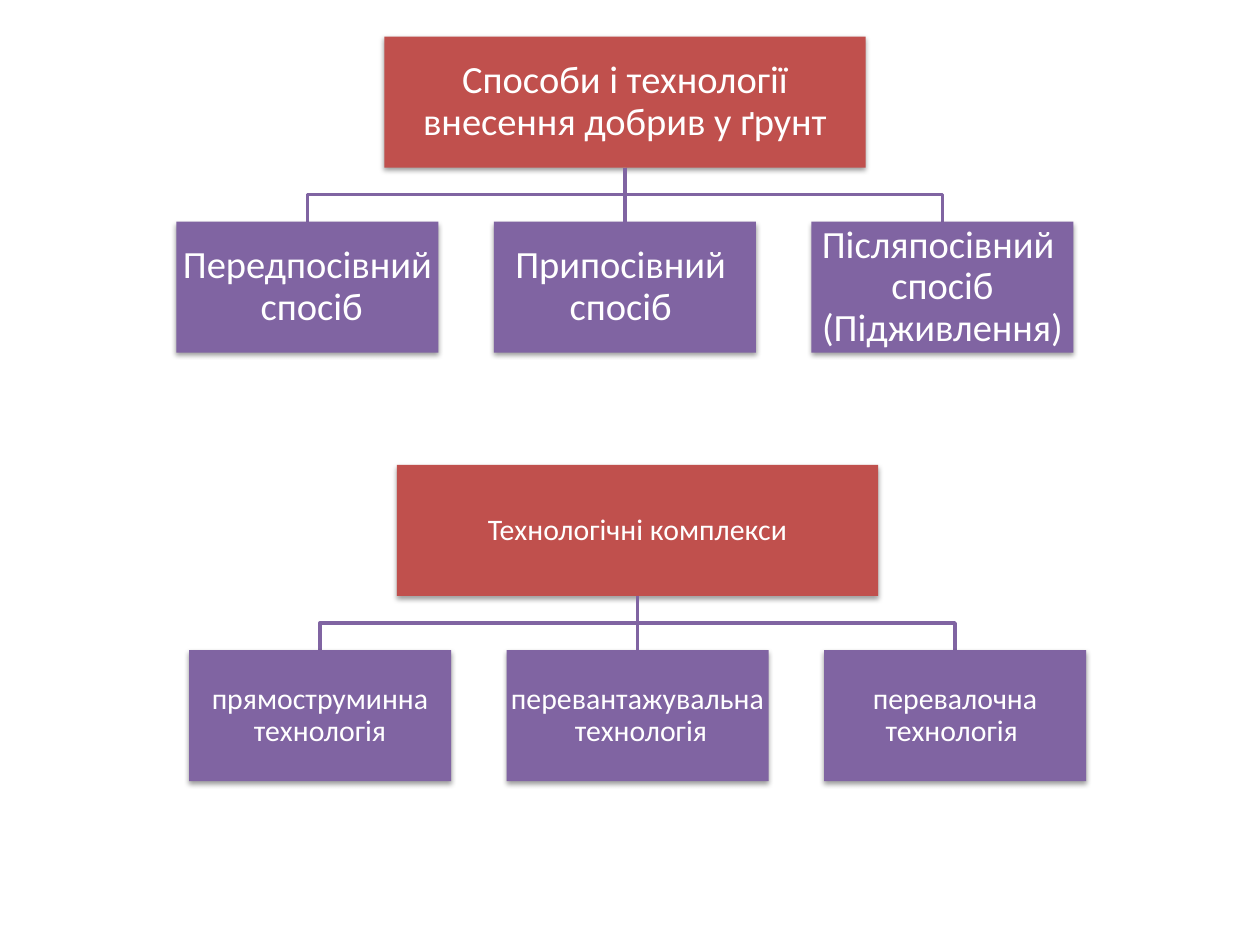
from lxml import etree
from pptx import Presentation
from pptx.dml.color import RGBColor
from pptx.enum import shapes, text
from pptx.oxml import ns
from pptx.util import Inches, Pt

# Content: each chart has a root, its branches and its place
CHARTS = [
    {
        "root": "Способи і технології внесення добрив у ґрунт",
        "branches": ["Передпосівний  спосіб", "Припосівний  спосіб ",
                     "Післяпосівний  спосіб (Підживлення)"],
        "center": 4.96, "top": 0.29, "size": 22, "inset": 0.02,
    },
    {
        "root": "Технологічні комплекси",
        "branches": ["прямоструминна технологія", "перевантажувальна  технологія",
                     "перевалочна технологія "],
        "center": 5.06, "top": 3.69, "size": 17, "inset": 0.01,
    },
]

THEME = {
    "font": "Calibri", "text": RGBColor.from_string("FFFFFF"),
    "root": RGBColor.from_string("C0504D"),
    "branch": RGBColor.from_string("8064A2"),
    "line": Pt(2),
}
ROOT_WIDTH, BRANCH_WIDTH, HEIGHT = 3.82, 2.08, 1.04
STEP, DROP = 2.52, 0.43


def set_effects(shape, shadow=False):
    """Replace inherited effects with none, or with a soft shadow below."""
    properties = shape._element.spPr
    for old in properties.findall(ns.qn("a:effectLst")):
        properties.remove(old)
    effects = etree.SubElement(properties, ns.qn("a:effectLst"))
    if shadow:
        outer = etree.SubElement(effects, ns.qn("a:outerShdw"), blurRad=str(Pt(3.1)),
                                 dist=str(Pt(1.6)), dir="5400000", rotWithShape="0")
        color = etree.SubElement(outer, ns.qn("a:srgbClr"), val="000000")
        etree.SubElement(color, ns.qn("a:alpha"), val="38000")


def style_line(line):
    line.color.rgb = THEME["branch"]
    line.width = THEME["line"]


def add_box(group, label, center, top, width, fill, chart):
    box = group.shapes.add_shape(
        shapes.MSO_SHAPE.RECTANGLE, Inches(center - width / 2), Inches(top),
        Inches(width), Inches(HEIGHT))
    box.fill.solid()
    box.fill.fore_color.rgb = fill
    box.line.fill.background()
    set_effects(box, shadow=True)

    frame = box.text_frame
    frame.word_wrap = True
    frame.vertical_anchor = text.MSO_ANCHOR.MIDDLE
    for side in ("left", "top", "right", "bottom"):
        setattr(frame, f"margin_{side}", Inches(chart["inset"]))
    para = frame.paragraphs[0]
    para.alignment, para.line_spacing = text.PP_ALIGN.CENTER, 0.9
    span = para.add_run()
    span.text = label
    formats = {"name": THEME["font"], "size": Pt(chart["size"])}
    for name, value in formats.items():
        setattr(span.font, name, value)
    span.font.color.rgb = THEME["text"]
    return box


def add_elbow(group, start, end, top):
    middle, bottom = top + DROP / 2, top + DROP
    builder = group.shapes.build_freeform(Inches(start), Inches(top))
    corners = [(start, middle), (end, middle), (end, bottom)]
    builder.add_line_segments([(Inches(x), Inches(y)) for x, y in corners], close=False)
    elbow = builder.convert_to_shape()
    elbow.fill.background()
    style_line(elbow.line)
    set_effects(elbow)


def add_stem(group, root, branch):
    stem = group.shapes.add_connector(shapes.MSO_CONNECTOR.STRAIGHT, 0, 0, 0, 0)
    stem.begin_connect(root, 2)
    stem.end_connect(branch, 0)
    style_line(stem.line)
    set_effects(stem)


def add_chart_tree(page, chart):
    group = page.shapes.add_group_shape()
    center, top = chart["center"], chart["top"]
    middle = len(chart["branches"]) // 2
    centers = [center + (i - middle) * STEP for i in range(len(chart["branches"]))]

    # Side branches lie behind the boxes
    for x in centers:
        if x != center:
            add_elbow(group, center, x, top + HEIGHT)

    # Root, branches and the straight stem between them
    root = add_box(group, chart["root"], center, top, ROOT_WIDTH, THEME["root"], chart)
    boxes = [add_box(group, label, x, top + HEIGHT + DROP, BRANCH_WIDTH,
                     THEME["branch"], chart)
             for label, x in zip(chart["branches"], centers)]
    add_stem(group, root, boxes[middle])


def main():
    deck = Presentation()
    deck.slide_width, deck.slide_height = Inches(10), Inches(7.5)
    page = deck.slides.add_slide(deck.slide_layouts[6])
    for chart in CHARTS:
        add_chart_tree(page, chart)
    deck.save("out.pptx")


if __name__ == "__main__":
    main()
